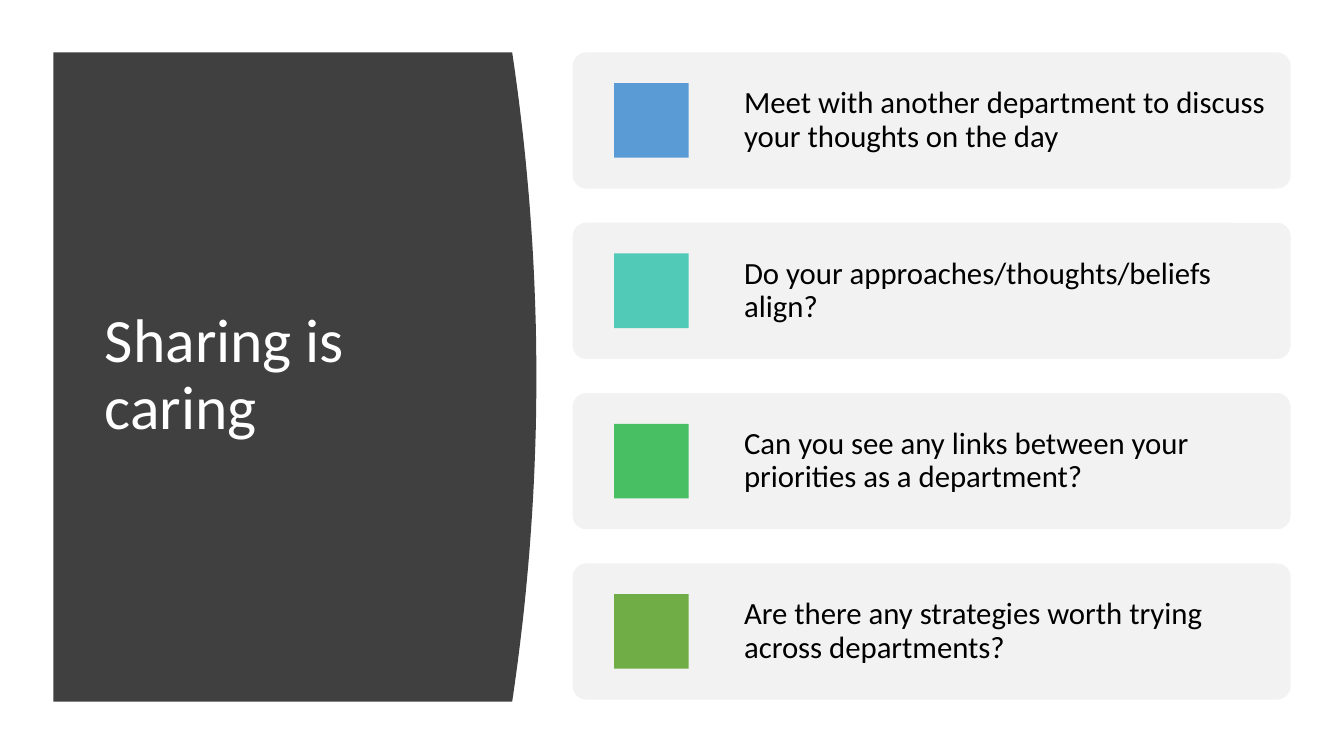
from dataclasses import dataclass

from pptx import Presentation
from pptx.dml.color import RGBColor
from pptx.enum.shapes import MSO_SHAPE
from pptx.enum.text import MSO_ANCHOR, PP_ALIGN
from pptx.util import Inches, Pt

ROUNDED, SQUARE = MSO_SHAPE.ROUNDED_RECTANGLE, MSO_SHAPE.RECTANGLE
MIDDLE, LEFT = MSO_ANCHOR.MIDDLE, PP_ALIGN.LEFT
TITLE_ONLY = 5

TITLE = "Sharing is caring"
PROMPTS = [
    ("5B9BD5", "Meet with another department to discuss your thoughts on the day"),
    ("52CAB8", "Do your approaches/thoughts/beliefs align?"),
    ("49BF64", "Can you see any links between your priorities as a department?"),
    ("70AD47", "Are there any strategies worth trying across departments?"),
]


@dataclass(frozen=True)
class Theme:
    font: str = "Calibri"
    panel: str = "404040"
    card: str = "F2F2F2"
    title_color: str = "FFFFFF"
    prompt_color: str = "000000"
    title_size: int = 44
    prompt_size: int = 22
    line_spacing: float = 0.9


def write_text(frame, text, *, font, size, color, spacing, inset_x, inset_y):
    frame.word_wrap = True
    frame.vertical_anchor = MIDDLE
    frame.margin_left = frame.margin_right = Inches(inset_x)
    frame.margin_top = frame.margin_bottom = Inches(inset_y)
    frame.text = text
    paragraph = frame.paragraphs[0]
    paragraph.alignment = LEFT
    paragraph.line_spacing = spacing
    paragraph.font.name = font
    paragraph.font.size = Pt(size)
    paragraph.font.bold = False
    paragraph.font.color.rgb = RGBColor.from_string(color)


class SlideBuilder:
    def __init__(self, slide, theme):
        self.slide = slide
        self.theme = theme

    def paint(self, shape, color):
        shape.shadow.inherit = False
        shape.fill.solid()
        shape.fill.fore_color.rgb = RGBColor.from_string(color)
        shape.line.fill.background()

    def block(self, preset, left, top, width, height, color):
        shape = self.slide.shapes.add_shape(
            preset, Inches(left), Inches(top), Inches(width), Inches(height))
        self.paint(shape, color)
        return shape

    def curved_panel(self, left, top, edge, height, bulge, steps=48):
        """Draw a panel whose right side is a parabola reaching bulge past edge."""
        curve = []
        for step in range(steps + 1):
            offset = 2 * step / steps - 1
            curve.append((Inches(edge + bulge * (1 - offset ** 2)),
                          Inches(top + height * step / steps)))
        outline = self.slide.shapes.build_freeform(Inches(left), Inches(top))
        outline.add_line_segments(curve + [(Inches(left), Inches(top + height))])
        self.paint(outline.convert_to_shape(), self.theme.panel)

    def title(self, text, left, top, width, height):
        """Place the title in front of everything drawn so far."""
        heading = self.slide.shapes.title
        self.slide.shapes.element.append(heading.element)
        heading.left, heading.top = Inches(left), Inches(top)
        heading.width, heading.height = Inches(width), Inches(height)
        write_text(heading.text_frame, text, font=self.theme.font,
                   size=self.theme.title_size, color=self.theme.title_color,
                   spacing=self.theme.line_spacing, inset_x=0.1, inset_y=0.05)

    def prompt_card(self, text, marker_color, left, top, width, height):
        marker_size, marker_indent, text_indent = 0.74, 0.41, 1.56
        card = self.block(ROUNDED, left, top, width, height, self.theme.card)
        card.adjustments[0] = 0.1
        self.block(SQUARE, left + marker_indent, top + (height - marker_size) / 2,
                   marker_size, marker_size, marker_color)
        prompt = self.slide.shapes.add_textbox(
            Inches(left + text_indent), Inches(top),
            Inches(width - text_indent), Inches(height))
        write_text(prompt.text_frame, text, font=self.theme.font,
                   size=self.theme.prompt_size, color=self.theme.prompt_color,
                   spacing=self.theme.line_spacing, inset_x=0.14, inset_y=0.14)


def main():
    deck = Presentation()
    deck.slide_width, deck.slide_height = Inches(13.33), Inches(7.5)
    slide = deck.slides.add_slide(deck.slide_layouts[TITLE_ONLY])
    builder = SlideBuilder(slide, Theme())

    builder.curved_panel(left=0.53, top=0.52, edge=5.08, height=6.44, bulge=0.24)
    builder.title(TITLE, left=0.94, top=1.11, width=3.74, height=5.24)

    first_top, pitch = 0.52, 1.69
    for row, (marker_color, prompt) in enumerate(PROMPTS):
        builder.prompt_card(prompt, marker_color, left=5.68,
                            top=first_top + row * pitch, width=7.12, height=1.35)

    deck.save("out.pptx")


if __name__ == "__main__":
    main()
